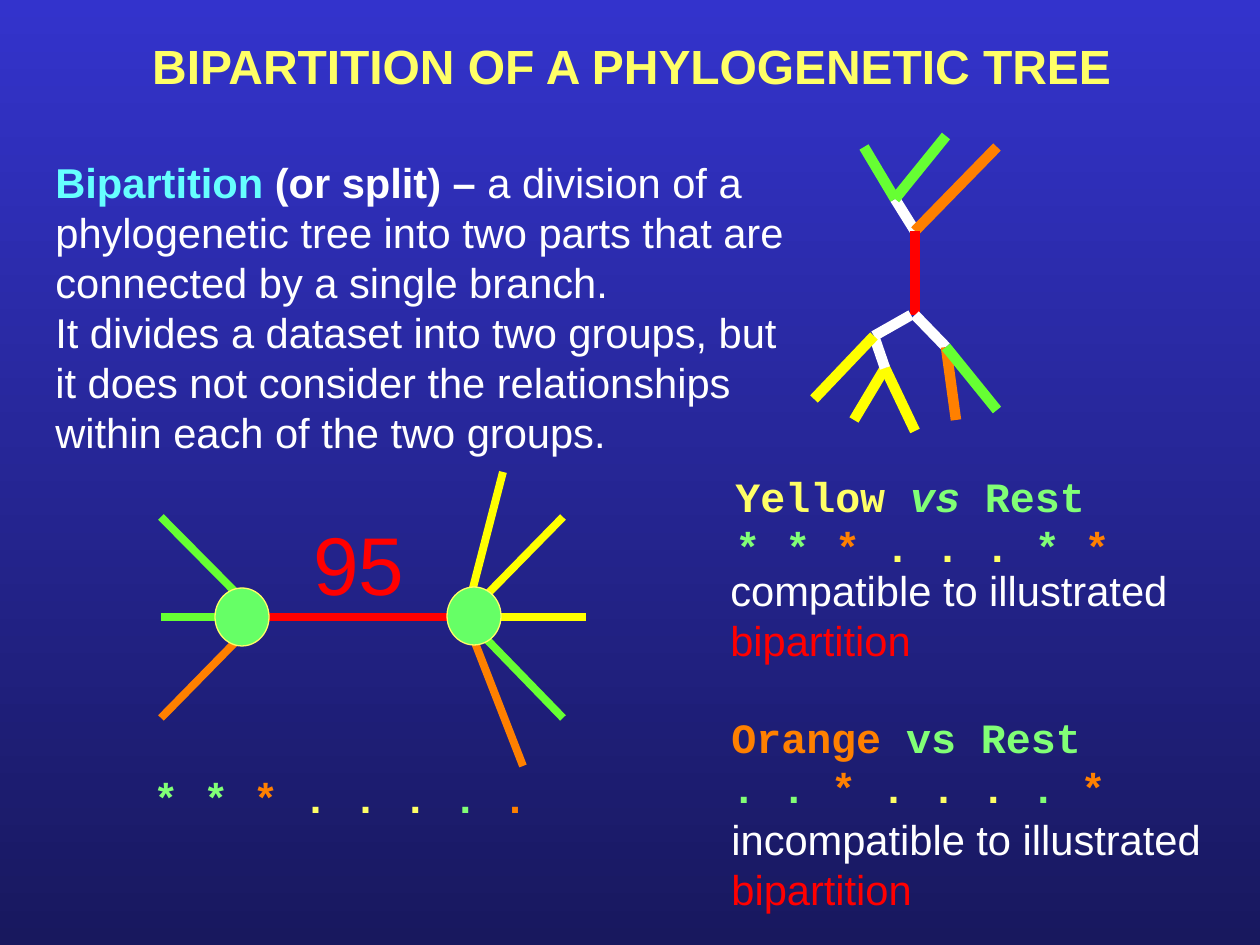
from lxml import etree
from pptx import Presentation
from pptx.dml.color import RGBColor
from pptx.enum.shapes import MSO_CONNECTOR as Connector, MSO_SHAPE as Shape
from pptx.enum.text import PP_ALIGN as Align
from pptx.oxml.ns import qn
from pptx.util import Pt

PX = 914400 / 126
WHITE, RED, YELLOW = "FFFFFF", "FF0000", "FFFF00"
GREEN, ORANGE = "66FF33", "FF8000"
PALE_YELLOW, PALE_GREEN, CYAN = "FFFF66", "81FF76", "66FFFF"
rgb = RGBColor.from_string


def px(*lengths):
    return [round(length * PX) for length in lengths]


def add_text(place, paragraphs, size=23.8, font="Arial", bold=False, wrap=True, align=Align.LEFT):
    """Each paragraph is a list of (text, colour, font overrides)."""
    frame = page.shapes.add_textbox(*px(*place)).text_frame
    frame.word_wrap = wrap
    for number, spans in enumerate(paragraphs):
        para = frame.add_paragraph() if number else frame.paragraphs[0]
        para.alignment = align
        para.font.size, para.font.name, para.font.bold = Pt(size), font, bold
        for text, colour, *overrides in spans:
            for row, piece in enumerate(text.split("\n")):
                if row:
                    para.add_line_break()
                if not piece:
                    continue
                span = para.add_run()
                span.text = piece
                span.font.size, span.font.name, span.font.bold = Pt(size), font, bold
                span.font.color.rgb = rgb(colour)
                for style in overrides:
                    setattr(span.font, *style)


deck = Presentation()
deck.slide_width, deck.slide_height = px(1260, 945)
page = deck.slides.add_slide(deck.slide_layouts[6])

# Background gradient
backdrop = page.background.fill
backdrop.gradient()
backdrop.gradient_angle = 270
for stop, colour in zip(backdrop.gradient_stops, ("3333CC", "18185E")):
    stop.color.rgb = rgb(colour)

# Title and definition
add_text((135, 30, 993, 71), [[("BIPARTITION OF A PHYLOGENETIC TREE", PALE_YELLOW)]],
         size=27.4, bold=True, wrap=False, align=Align.CENTER)
add_text((43, 151, 760, 315), [
    [("Bipartition", CYAN, ("bold", True)),
     (" (or split) – ", WHITE, ("bold", True)),
     ("a division of a phylogenetic tree into two parts that are "
      "connected by a single branch.", WHITE)],
    [("It divides a dataset into two groups, but it does not consider "
      "the relationships within each of the two groups.", WHITE)],
])

# Branches of the collapsed tree and of the full tree
left_hub, right_hub = (260, 617), (465, 617)
star_branches = [
    (left_hub, right_hub, RED),
    (right_hub, (563, 517), YELLOW),
    (right_hub, (563, 718), GREEN),
    ((161, 718), left_hub, ORANGE),
    ((161, 517), left_hub, GREEN),
    ((467, 611), (503, 472), YELLOW),
    (right_hub, (523, 766), ORANGE),
    (right_hub, (586, 617), YELLOW),
    (left_hub, (161, 617), GREEN),
]
top_fork, upper_node, lower_node = (895, 199), (915, 231), (915, 315)
left_fork, inner_fork, right_fork = (874, 336), (885, 368), (946, 347)
tree_branches = [
    (top_fork, upper_node, WHITE),
    (top_fork, (946, 136), GREEN),
    (upper_node, (997, 147), ORANGE),
    (upper_node, lower_node, RED),
    (left_fork, (911, 315), WHITE),
    ((854, 420), inner_fork, YELLOW),
    (inner_fork, (915, 431), YELLOW),
    (lower_node, right_fork, WHITE),
    (right_fork, (956, 420), ORANGE),
    ((864, 147), top_fork, GREEN),
    (left_fork, inner_fork, WHITE),
    ((814, 399), left_fork, YELLOW),
    (right_fork, (997, 410), GREEN),
]
for branches, width in ((star_branches, 4.5), (tree_branches, 6)):
    for start, end, colour in branches:
        branch = page.shapes.add_connector(Connector.STRAIGHT, *px(*start, *end))
        branch.line.color.rgb = rgb(colour)
        branch.line.width = Pt(width)
        etree.SubElement(branch._element.spPr, qn("a:effectLst"))

# Support value and hubs
add_text((301, 507, 117, 112), [[("95", RED)]], size=46.8, wrap=False)
for left, top in ((447, 587), (215, 588)):
    hub = page.shapes.add_shape(Shape.OVAL, *px(left, top, 54, 58))
    hub.shadow.inherit = False
    hub.fill.solid()
    hub.fill.fore_color.rgb = rgb("66FF66")
    hub.line.color.rgb = rgb(PALE_YELLOW)
    hub.line.width = Pt(0.75)

# Verdicts on the two splits
for place, verdict in (((718, 559, 479, 113), "compatible"),
                       ((719, 808, 512, 113), "incompatible")):
    add_text(place, [[(f"{verdict} to illustrated \n", WHITE), ("bipartition", RED)]], wrap=False)

# Split patterns
dots = (". . . ", PALE_YELLOW)
patterns = [
    ((141, 766, 449, 63),
     [("* * ", PALE_GREEN), ("* ", ORANGE), dots, (". ", PALE_GREEN), (".", ORANGE)]),
    ((719, 706, 449, 113),
     [("Orange", ORANGE), (" vs Rest\n. . ", PALE_GREEN), ("* ", ORANGE), dots,
      (". ", PALE_GREEN), ("*", ORANGE)]),
    ((723, 465, 449, 113),
     [("Yellow ", PALE_YELLOW), ("vs", PALE_GREEN, ("italic", True)),
      (" Rest \n* * ", PALE_GREEN), ("* ", ORANGE), dots,
      ("* ", PALE_GREEN), ("*", ORANGE)]),
]
for place, spans in patterns:
    add_text(place, [spans], font="Courier New", bold=True)

deck.save("out.pptx")
